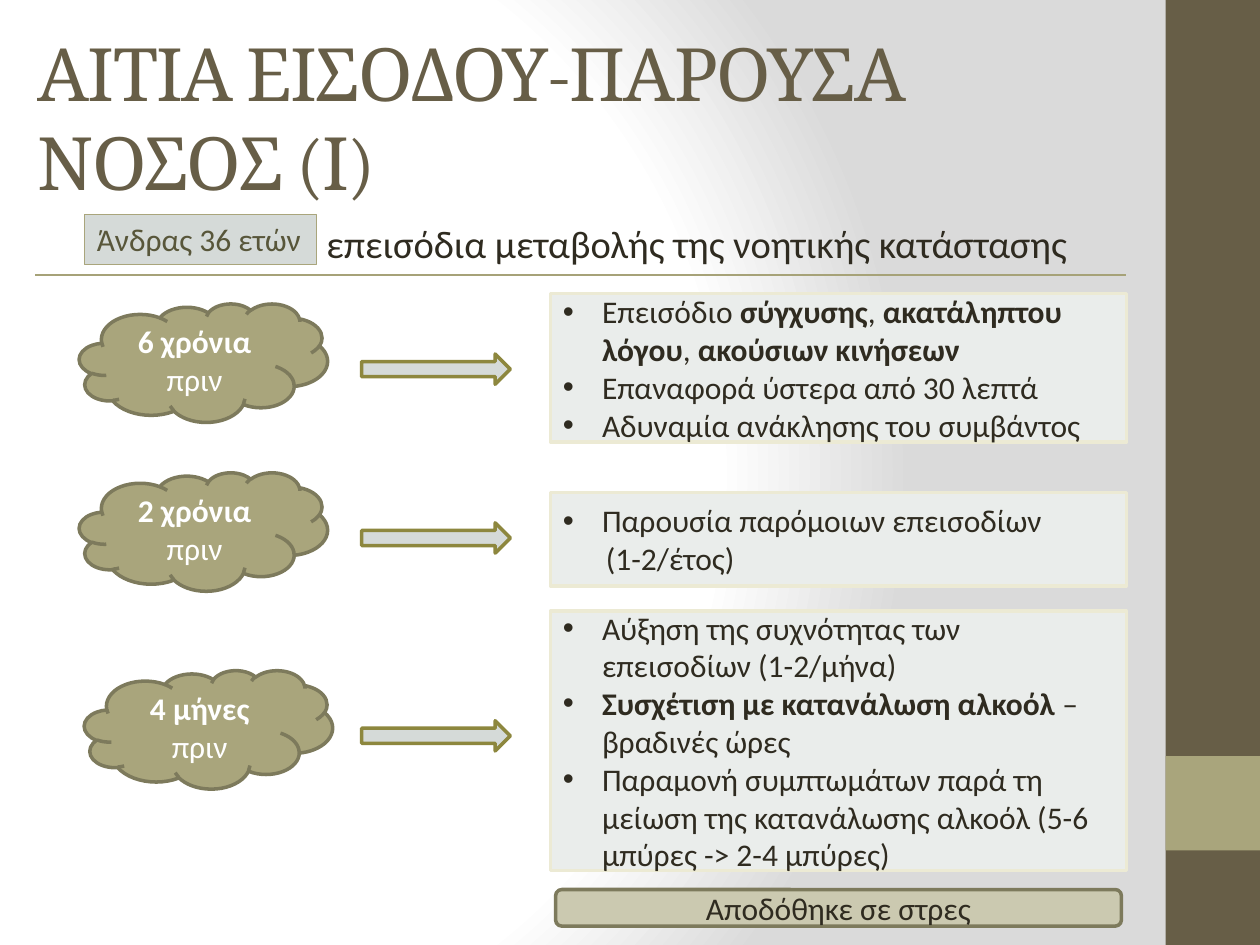
from lxml import etree
from pptx import Presentation
from pptx.dml.color import RGBColor
from pptx.enum.shapes import MSO_CONNECTOR, MSO_SHAPE
from pptx.enum.text import MSO_ANCHOR, MSO_AUTO_SIZE, PP_ALIGN
from pptx.oxml.ns import qn
from pptx.util import Inches, Pt

RECTANGLE, CLOUD = MSO_SHAPE.RECTANGLE, MSO_SHAPE.CLOUD
ARROW, ROUNDED = MSO_SHAPE.RIGHT_ARROW, MSO_SHAPE.ROUNDED_RECTANGLE
LEFT, CENTER = PP_ALIGN.LEFT, PP_ALIGN.CENTER
TOP, MIDDLE = MSO_ANCHOR.TOP, MSO_ANCHOR.MIDDLE

WHITE = RGBColor(0xFF, 0xFF, 0xFF)
GREY = RGBColor(0xDA, 0xDA, 0xDA)
BROWN = RGBColor(0x67, 0x5E, 0x47)
OLIVE = RGBColor(0xA9, 0xA5, 0x7C)
OLIVE_DARK = RGBColor(0x7D, 0x7A, 0x5C)
OLIVE_LIGHT = RGBColor(0xCB, 0xC9, 0xB0)
ARROW_EDGE = RGBColor(0x8D, 0x87, 0x3E)
RULE = RGBColor(0xA6, 0xA2, 0x78)
MIST = RGBColor(0xD5, 0xDA, 0xD8)
BOX_FILL = RGBColor(0xEA, 0xED, 0xEB)
BOX_EDGE = RGBColor(0xEC, 0xEA, 0xD4)
LABEL_TEXT = RGBColor(0x58, 0x56, 0x3A)
DARK = RGBColor(0x2F, 0x2B, 0x20)

# The slide is a grid of 100 columns by 75 rows
CELL = Inches(0.1)
ARROW_COLUMN, BOX_COLUMN, BOX_COLUMNS = 28.7, 43.7, 45.7
ARROW_DROP = 4
HANGING = Inches(0.31)

# Each event: cloud column and row, cloud runs, box row and height,
# and box paragraphs as (bulleted, runs); a run is (text, bold)
EVENTS = [
    (6.3, 24.1, [("6 χρόνια", True), (" πριν", False)], 23.3, 11.8, [
        (True, [("Επεισόδιο ", False), ("σύγχυσης", True), (", ", False),
                ("ακατάληπτου λόγου", True), (", ", False),
                ("ακούσιων κινήσεων", True)]),
        (True, [("Επαναφορά ύστερα από 30 λεπτά", False)]),
        (True, [("Αδυναμία ανάκλησης του συμβάντος", False)])]),
    (6.3, 37.5, [("2 χρόνια", True), (" πριν", False)], 39.1, 7.4, [
        (True, [("Παρουσία παρόμοιων επεισοδίων", False)]),
        (False, [("(1-2/έτος)", False)])]),
    (6.7, 53.2, [("4 μήνες ", True), ("πριν", False)], 48.5, 20.6, [
        (True, [("Αύξηση της συχνότητας των επεισοδίων (1-2/μήνα)", False)]),
        (True, [("Συσχέτιση με κατανάλωση αλκοόλ ", True),
                ("– βραδινές ώρες", False)]),
        (True, [("Παραμονή συμπτωμάτων παρά τη μείωση της κατανάλωσης "
                 "αλκοόλ (5-6 μπύρες -> 2-4 μπύρες)", False)])]),
]


def cells(*counts):
    return [round(count * CELL) for count in counts]


def set_background(slide):
    fill = slide.background.fill
    fill.gradient()
    gradient = slide.background._cSld.find(".//" + qn("a:gradFill"))
    for child in list(gradient):
        gradient.remove(child)
    stops = etree.SubElement(gradient, qn("a:gsLst"))
    for position, color in ((0, WHITE), (75, WHITE), (100, GREY)):
        stop = etree.SubElement(stops, qn("a:gs"), pos=str(position * 1000))
        etree.SubElement(stop, qn("a:srgbClr"), val=str(color))
    shading = etree.SubElement(gradient, qn("a:path"))
    shading.set("path", "circle")
    etree.SubElement(shading, qn("a:fillToRect"),
                     l="20000", t="50000", r="100000", b="50000")


def set_indent(paragraph, left, first=0, bullet=None):
    properties = paragraph._p.get_or_add_pPr()
    properties.set("marL", str(left))
    properties.set("indent", str(first))
    if bullet:
        etree.SubElement(properties, qn("a:buFont"), typeface="Arial")
        etree.SubElement(properties, qn("a:buChar"), char=bullet)
    else:
        etree.SubElement(properties, qn("a:buNone"))


def format_run(run, color, size=18, bold=False, name="Calibri"):
    font = run.font
    font.name, font.size, font.bold = name, Pt(size), bold
    font.color.rgb = color


def add_runs(paragraph, runs, color, align=LEFT):
    paragraph.alignment = align
    for text, bold in runs:
        run = paragraph.add_run()
        run.text = text
        format_run(run, color, bold=bold)


def add_block(slide, kind, place, fill, edge=None, weight=2):
    shape = slide.shapes.add_shape(kind, *cells(*place))
    shape.shadow.inherit = False
    shape.fill.solid()
    shape.fill.fore_color.rgb = fill
    if edge is None:
        shape.line.fill.background()
    else:
        shape.line.color.rgb = edge
        shape.line.width = Pt(weight)
    return shape


def add_rule(slide, start, end):
    line = slide.shapes.add_connector(
        MSO_CONNECTOR.STRAIGHT, *cells(*start, *end))
    line.line.color.rgb = RULE
    line.line.width = Pt(1)
    etree.SubElement(line._element.spPr, qn("a:effectLst"))


def fill_placeholder(shape, place, text, color, size, name, anchor):
    shape.left, shape.top, shape.width, shape.height = cells(*place)
    frame = shape.text_frame
    frame.text = text
    frame.word_wrap = True
    frame.auto_size = MSO_AUTO_SIZE.NONE
    frame.vertical_anchor = anchor
    paragraph = frame.paragraphs[0]
    paragraph.alignment = LEFT
    format_run(paragraph.runs[0], color, size, name=name)
    return paragraph


def add_event(slide, column, row, when, box_row, box_rows, findings):
    cloud = add_block(slide, CLOUD, (column, row, 19.7, 9.4),
                      OLIVE, OLIVE_DARK)
    add_runs(cloud.text_frame.paragraphs[0], when, WHITE, CENTER)

    add_block(slide, ARROW, (ARROW_COLUMN, row + ARROW_DROP, 11.8, 2.4),
              MIST, ARROW_EDGE)

    box = add_block(slide, RECTANGLE,
                    (BOX_COLUMN, box_row, BOX_COLUMNS, box_rows),
                    BOX_FILL, BOX_EDGE)
    frame = box.text_frame
    for index, (bulleted, runs) in enumerate(findings):
        paragraph = frame.add_paragraph() if index else frame.paragraphs[0]
        add_runs(paragraph, runs, DARK)
        if bulleted:
            set_indent(paragraph, HANGING, -HANGING, "•")
        else:
            set_indent(paragraph, Inches(0.34))


def main():
    presentation = Presentation()
    presentation.slide_width, presentation.slide_height = cells(100, 75)
    slide = presentation.slides.add_slide(presentation.slide_layouts[1])
    set_background(slide)

    # Side band
    add_block(slide, RECTANGLE, (92.5, 0, 7.5, 75), BROWN)
    add_block(slide, RECTANGLE, (92.5, 60, 7.5, 7.5), OLIVE)

    # Title and lead line
    title = fill_placeholder(
        slide.shapes.title, (2, 3, 89.8, 12.5),
        "ΑΙΤΙΑ ΕΙΣΟΔΟΥ-ΠΑΡΟΥΣΑ ΝΟΣΟΣ (Ι)", BROWN, 42, "Cambria", MIDDLE)
    title.runs[0]._r.get_or_add_rPr().set("spc", "-100")
    lead = fill_placeholder(
        slide.placeholders[1], (5, 17, 83.3, 52.5),
        "επεισόδια μεταβολής της νοητικής κατάστασης",
        DARK, 22, "Calibri", TOP)
    lead.space_before = Pt(4.4)
    set_indent(lead, Inches(1.99))

    # Patient label and rule
    label = add_block(slide, RECTANGLE, (6.7, 17, 18.4, 4),
                      MIST, OLIVE, 0.75)
    label.text_frame.word_wrap = False
    label.text_frame.auto_size = MSO_AUTO_SIZE.SHAPE_TO_FIT_TEXT
    label.text_frame.vertical_anchor = TOP
    add_runs(label.text_frame.paragraphs[0],
             [("Άνδρας 36 ετών", False)], LABEL_TEXT)
    add_rule(slide, (2.8, 21.8), (89.4, 21.8))

    # Timeline of events
    for event in EVENTS:
        add_event(slide, *event)

    # Conclusion
    conclusion = add_block(slide, ROUNDED, (44.1, 70.6, 44.9, 2.9),
                           OLIVE_LIGHT, OLIVE_DARK)
    add_runs(conclusion.text_frame.paragraphs[0],
             [("Αποδόθηκε σε στρες", False)], DARK, CENTER)

    presentation.save("out.pptx")


if __name__ == "__main__":
    main()
